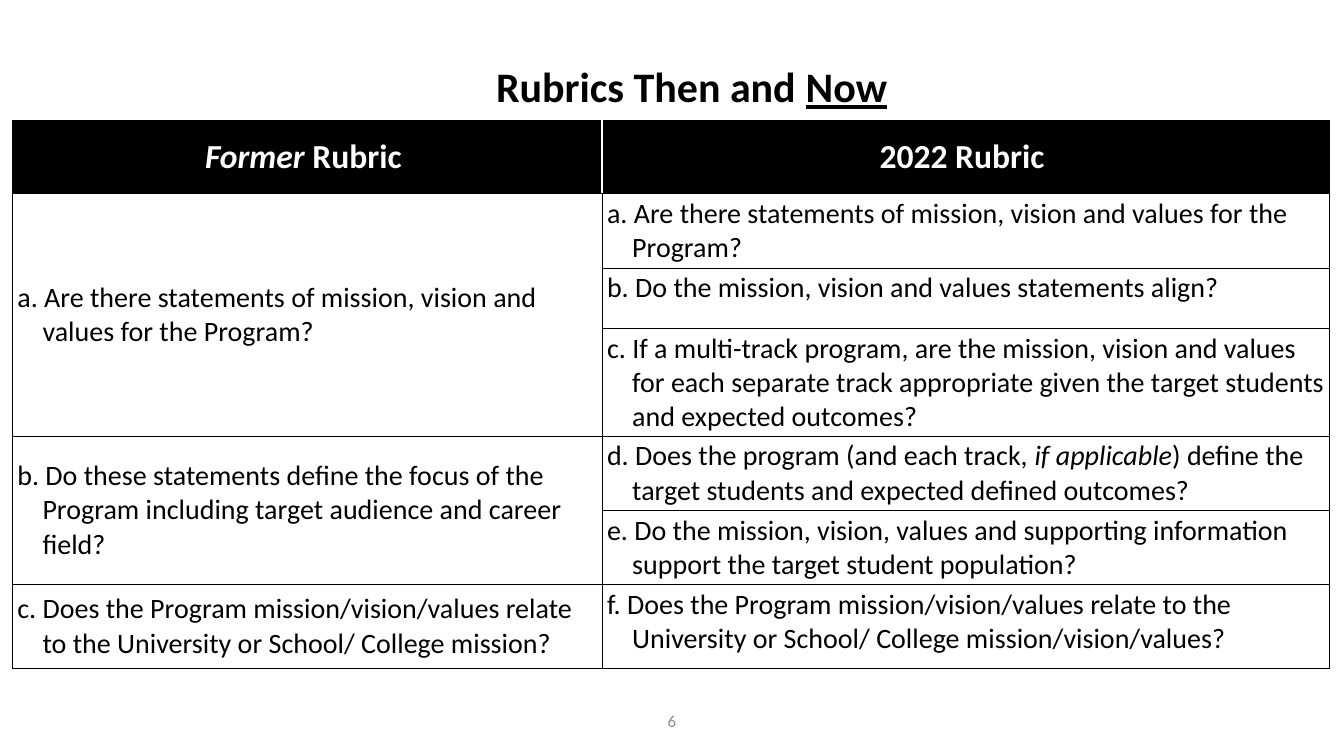
import pptx
import pptx.util
import pptx.dml.color
import pptx.enum.text
import pptx.oxml
import pptx.oxml.ns

Pt = pptx.util.Pt
RGB = pptx.dml.color.RGBColor
Align = pptx.enum.text.PP_ALIGN
Anchor = pptx.enum.text.MSO_ANCHOR
BLACK, WHITE, GRAY = RGB(0, 0, 0), RGB(255, 255, 255), RGB(0x8C, 0x8C, 0x8C)
FONT = "Calibri"

TITLE = [("Rubrics Then and ", {}), ("Now", {"underline": True})]
NUMBER = [("6", {})]
HEADS = [
    [("Former", {"italic": True}), (" Rubric ", {})],
    [("2022 Rubric ", {})],
]
FORMER = [
    (1, 3, "a. Are there statements of mission, vision and values for the Program?"),
    (4, 2, "b. Do these statements define the focus of the Program including target audience and career field?"),
    (6, 1, "c. Does the Program mission/vision/values relate to the University or School/ College mission?"),
]
LATEST = [
    [("a. Are there statements of mission, vision and values for the Program?", {})],
    [("b. Do the mission, vision and values statements align?", {})],
    [("c. If a multi-track program, are the mission, vision and values for each separate track appropriate given the target students and expected outcomes?", {})],
    [("d. Does the program (and each track, ", {}), ("if applicable", {"italic": True}),
     (") define the target students and expected defined outcomes?", {})],
    [("e. Do the mission, vision, values and supporting information support the target student population?", {})],
    [("f. Does the Program mission/vision/values relate to the University or School/ College mission/vision/values?", {})],
]
WIDTHS = [421.2, 519.8]
HEIGHTS = [52, 53, 43.2, 77, 53, 53, 60]
LEFT, TOP = 8.8, 86.4


def write(frame, runs, size, color, bold=False, align=Align.CENTER):
    para = frame.paragraphs[0]
    para.alignment = align
    for text, style in runs:
        run = para.add_run()
        run.text = text
        look = {"name": FONT, "size": Pt(size), "bold": bold, **style}
        for key, value in look.items():
            setattr(run.font, key, value)
        run.font.color.rgb = color
    return para


def label(slide, box, runs, size, color, bold, anchor):
    frame = slide.shapes.add_textbox(*map(Pt, box)).text_frame
    frame.word_wrap = True
    frame.vertical_anchor = anchor
    write(frame, runs, size, color, bold)


def border(cell, sides):
    props = cell._tc.get_or_add_tcPr()
    for side in "LRTB":
        color, width = sides[side]
        props.append(pptx.oxml.parse_xml(
            f'<a:ln{side} {pptx.oxml.ns.nsdecls("a")} w="{Pt(width)}">'
            f'<a:solidFill><a:srgbClr val="{color}"/></a:solidFill></a:ln{side}>'))


def dress(cell, row, col):
    edge = (BLACK, 1 if row == 0 else 0.38)
    sides = dict.fromkeys("LRTB", edge)
    if row == 0:
        sides["LR"[col == 0]] = (WHITE, 1)
    if row == 1:
        sides["T"] = (BLACK, 1)
    border(cell, sides)
    if row == 0:
        cell.fill.solid()
        cell.fill.fore_color.rgb = BLACK
    else:
        cell.fill.background()
    middle = row == 0 or col == 0
    look = {"margin_left": Pt(3.6), "margin_right": Pt(3.6),
            "margin_top": Pt(2.2), "margin_bottom": Pt(2.2),
            "vertical_anchor": Anchor.MIDDLE if middle else Anchor.TOP}
    for key, value in look.items():
        setattr(cell, key, value)


def entry(cell, runs):
    para = write(cell.text_frame, runs, 20, BLACK, align=Align.LEFT)
    props = para._p.get_or_add_pPr()
    props.set("marL", str(Pt(18)))
    props.set("indent", str(Pt(-18)))


def rubric(slide):
    table = slide.shapes.add_table(
        len(HEIGHTS), len(WIDTHS), Pt(LEFT), Pt(TOP),
        Pt(sum(WIDTHS)), Pt(sum(HEIGHTS))).table
    table.horz_banding = False
    for col, width in enumerate(WIDTHS):
        table.columns[col].width = Pt(width)
    for row, height in enumerate(HEIGHTS):
        table.rows[row].height = Pt(height)
        for col in range(len(WIDTHS)):
            dress(table.cell(row, col), row, col)
    for col, runs in enumerate(HEADS):
        write(table.cell(0, col).text_frame, runs, 24, WHITE, True)
    for row, span, text in FORMER:
        cell = table.cell(row, 0)
        if span > 1:
            cell.merge(table.cell(row + span - 1, 0))
        entry(cell, [(text, {})])
    for row, runs in enumerate(LATEST, 1):
        entry(table.cell(row, 1), runs)


def main():
    deck = pptx.Presentation()
    deck.slide_width, deck.slide_height = Pt(960), Pt(540)
    slide = deck.slides.add_slide(deck.slide_layouts[6])
    label(slide, (318, 500.4, 324, 28.8), NUMBER, 12, GRAY, False, Anchor.MIDDLE)
    label(slide, (301, 39.6, 386, 35.3), TITLE, 30, BLACK, True, Anchor.TOP)
    rubric(slide)
    deck.save("out.pptx")


if __name__ == "__main__":
    main()
